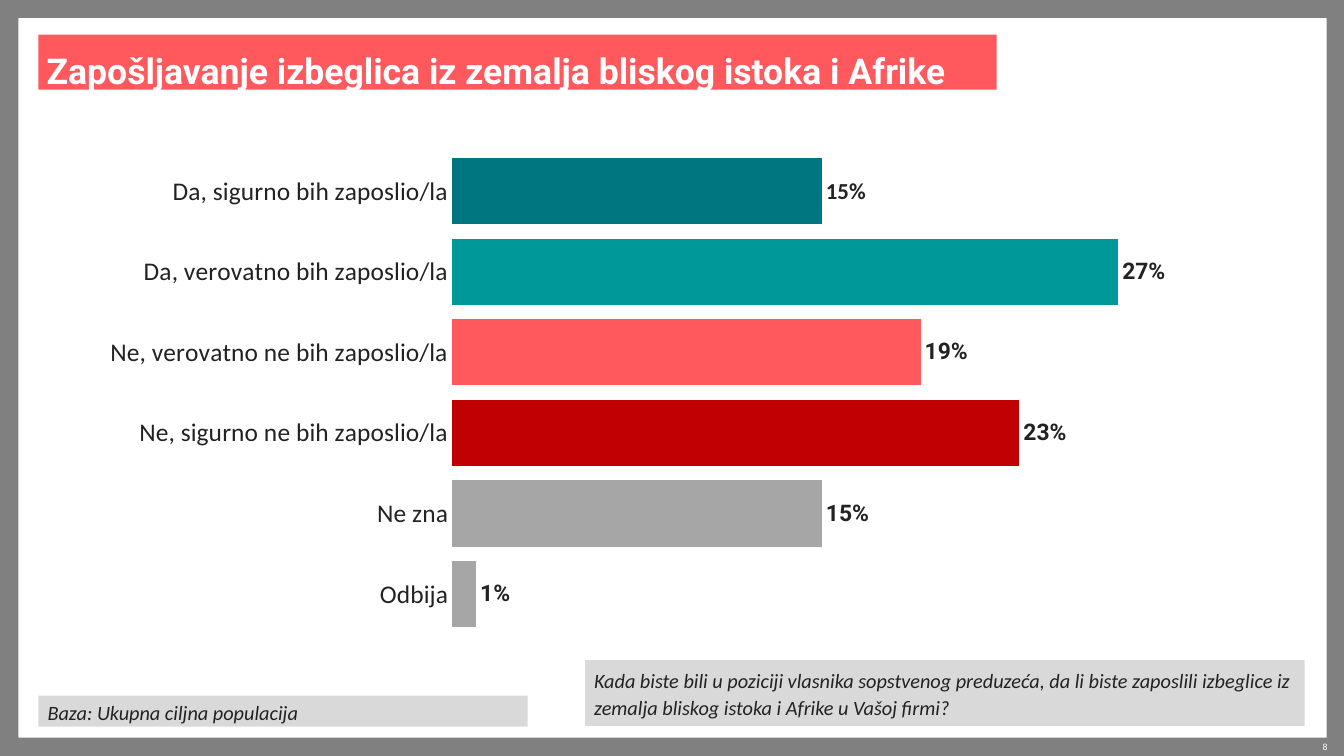
from lxml import etree
from pptx import Presentation
from pptx.chart.data import CategoryChartData
from pptx.dml.color import RGBColor
from pptx.enum.chart import XL_CHART_TYPE, XL_LABEL_POSITION, XL_TICK_LABEL_POSITION, XL_TICK_MARK
from pptx.enum.shapes import MSO_SHAPE
from pptx.enum.text import MSO_ANCHOR, MSO_AUTO_SIZE, PP_ALIGN
from pptx.oxml.ns import qn
from pptx.util import Inches, Pt

BAR = XL_CHART_TYPE.BAR_CLUSTERED
OUTSIDE_END = XL_LABEL_POSITION.OUTSIDE_END
NO_LABELS = XL_TICK_LABEL_POSITION.NONE
NO_TICKS = XL_TICK_MARK.NONE
RECTANGLE = MSO_SHAPE.RECTANGLE
MIDDLE = MSO_ANCHOR.MIDDLE
NO_AUTOFIT = MSO_AUTO_SIZE.NONE
LEFT, RIGHT = PP_ALIGN.LEFT, PP_ALIGN.RIGHT

HEADING_FONT, BODY_FONT = "Roboto", "Calibri"
WHITE, GREY, LIGHT_GREY, INK = "FFFFFF", "808080", "D9D9D9", "222223"
CORAL = "FF585D"
PERCENT_FORMAT = '#"%"'

ANSWERS = [
    ("Da, sigurno bih zaposlio/la", 15, "007681"),
    ("Da, verovatno bih zaposlio/la", 27, "009999"),
    ("Ne, verovatno ne bih zaposlio/la", 19, CORAL),
    ("Ne, sigurno ne bih zaposlio/la", 23, "C00000"),
    ("Ne zna", 15, "A6A6A6"),
    ("Odbija", 1, "A6A6A6"),
]


def color(hex_string):
    return RGBColor.from_string(hex_string)


class SurveySlide:
    def __init__(self, presentation):
        self.slide = presentation.slides.add_slide(presentation.slide_layouts[1])
        self.shapes = self.slide.shapes
        self.paint(self.slide.background, GREY)

    def paint(self, target, hex_string):
        target.fill.solid()
        target.fill.fore_color.rgb = color(hex_string)

    def place(self, shape, box):
        shape.left, shape.top, shape.width, shape.height = map(Inches, box)

    def style_font(self, font, name, size, hex_string, bold=False, italic=False):
        font.name, font.size = name, Pt(size)
        font.bold, font.italic = bold, italic
        font.color.rgb = color(hex_string)

    def add_text(self, shape, text, insets, alignment=LEFT, spacing=1.1, gap=0, wrap=True, **style):
        frame = shape.text_frame
        frame.auto_size = NO_AUTOFIT
        frame.word_wrap = wrap
        frame.vertical_anchor = MIDDLE
        frame.margin_left, frame.margin_top, frame.margin_right, frame.margin_bottom = map(Inches, insets)
        paragraph = frame.paragraphs[0]
        paragraph.alignment = alignment
        paragraph.line_spacing = spacing
        paragraph.space_before = paragraph.space_after = Pt(gap)
        run = paragraph.add_run()
        run.text = text
        self.style_font(run.font, **style)

    def rectangle(self, box, hex_string):
        shape = self.shapes.add_shape(RECTANGLE, *map(Inches, box))
        shape.shadow.inherit = False
        self.paint(shape, hex_string)
        shape.line.fill.background()
        return shape

    def panel(self, box):
        panel = self.rectangle(box, WHITE)
        panel.element.getparent().insert(2, panel.element)

    def title(self, box, text):
        shape = self.shapes.title
        self.place(shape, box)
        self.paint(shape, CORAL)
        self.add_text(shape, text, (0.09, 0.08, 0.09, 0), spacing=Pt(41), wrap=False,
                      name=HEADING_FONT, size=28, hex_string=WHITE, bold=True)

    def note(self, shape, text):
        self.add_text(shape, text, (0.1, 0, 0.1, 0), gap=6,
                      name=BODY_FONT, size=16, hex_string=INK, italic=True)

    def base(self, box, text):
        shape = self.slide.placeholders[1]
        self.place(shape, box)
        self.paint(shape, LIGHT_GREY)
        self.note(shape, text)
        properties = shape.element.find(".//" + qn("a:pPr"))
        properties.set("marL", "0")
        properties.set("indent", "0")
        etree.SubElement(properties, qn("a:buNone"))

    def question(self, box, text):
        self.note(self.rectangle(box, LIGHT_GREY), text)

    def page_number(self, box, text):
        shape = self.shapes.add_textbox(*map(Inches, box))
        self.add_text(shape, text, (0, 0, 0, 0), alignment=RIGHT,
                      name=HEADING_FONT, size=7, hex_string=WHITE)

    def bar_chart(self, box, answers, plot_area):
        data = CategoryChartData(number_format="General")
        data.categories = [label for label, value, fill in answers]
        data.add_series("Series 1", [value for label, value, fill in answers])
        chart = self.shapes.add_chart(BAR, *map(Inches, box), data).chart
        chart.has_title = chart.has_legend = False
        self.style_font(chart.font, HEADING_FONT, 18, INK)
        self.axes(chart)
        plot = chart.plots[0]
        plot.gap_width = 20
        plot.vary_by_categories = False
        self.bars(plot.series[0], answers)
        self.value_labels(chart, plot.series[0])
        self.plot_layout(chart, plot_area)

    def axes(self, chart):
        category_axis, value_axis = chart.category_axis, chart.value_axis
        category_axis.reverse_order = True
        self.style_font(category_axis.tick_labels.font, BODY_FONT, 20, INK)
        value_axis.minimum_scale, value_axis.maximum_scale = 0, 30
        value_axis.tick_label_position = NO_LABELS
        value_axis.has_major_gridlines = False
        for axis in (category_axis, value_axis):
            axis.major_tick_mark = NO_TICKS
            axis.format.line.fill.background()

    def bars(self, series, answers):
        for index, (label, value, fill) in enumerate(answers):
            bar = series.points[index].format
            self.paint(bar, fill)
            bar.line.color.rgb = color(WHITE)
            bar.line.width = Pt(0.75)

    def value_labels(self, chart, series):
        labels = series.data_labels
        labels.show_value = True
        labels.position = OUTSIDE_END
        labels.number_format = PERCENT_FORMAT
        labels.number_format_is_linked = False
        self.style_font(labels.font, HEADING_FONT, 18, INK, bold=True)
        first_label = series.points[0].data_label
        self.style_font(first_label.font, BODY_FONT, 18, INK, bold=True)
        first_label.position = OUTSIDE_END
        number_format = etree.Element(qn("c:numFmt"), formatCode=PERCENT_FORMAT, sourceLinked="0")
        chart.element.find(".//" + qn("c:dLbl")).insert(1, number_format)

    def plot_layout(self, chart, plot_area):
        area = chart.element.find(".//" + qn("c:plotArea"))
        layout = area.find(qn("c:layout"))
        if layout is None:
            layout = etree.Element(qn("c:layout"))
            area.insert(0, layout)
        manual = etree.SubElement(layout, qn("c:manualLayout"))
        settings = [("layoutTarget", "inner"), ("xMode", "edge"), ("yMode", "edge")]
        for name, value in settings + list(zip("xywh", plot_area)):
            etree.SubElement(manual, qn("c:" + name), val=str(value))


def main():
    presentation = Presentation()
    presentation.slide_width, presentation.slide_height = Inches(14.7), Inches(8.27)
    survey = SurveySlide(presentation)
    survey.panel((0.2, 0.2, 14.31, 7.87))
    survey.title((0.42, 0.38, 10.48, 0.6), "Zapošljavanje izbeglica iz zemalja bliskog istoka i Afrike")
    survey.bar_chart((0.89, 1.65, 12.28, 5.29), ANSWERS, (0.33, 0, 0.66, 1))
    survey.base((0.42, 7.61, 5.35, 0.34), "Baza: Ukupna ciljna populacija")
    survey.question((6.4, 7.22, 7.87, 0.72),
                    "Kada biste bili u poziciji vlasnika sopstvenog preduzeća, da li biste zaposlili "
                    "izbeglice iz zemalja bliskog istoka i Afrike u Vašoj firmi?")
    survey.page_number((13.73, 8.1, 0.79, 0.13), "8")
    presentation.save("out.pptx")


if __name__ == "__main__":
    main()
